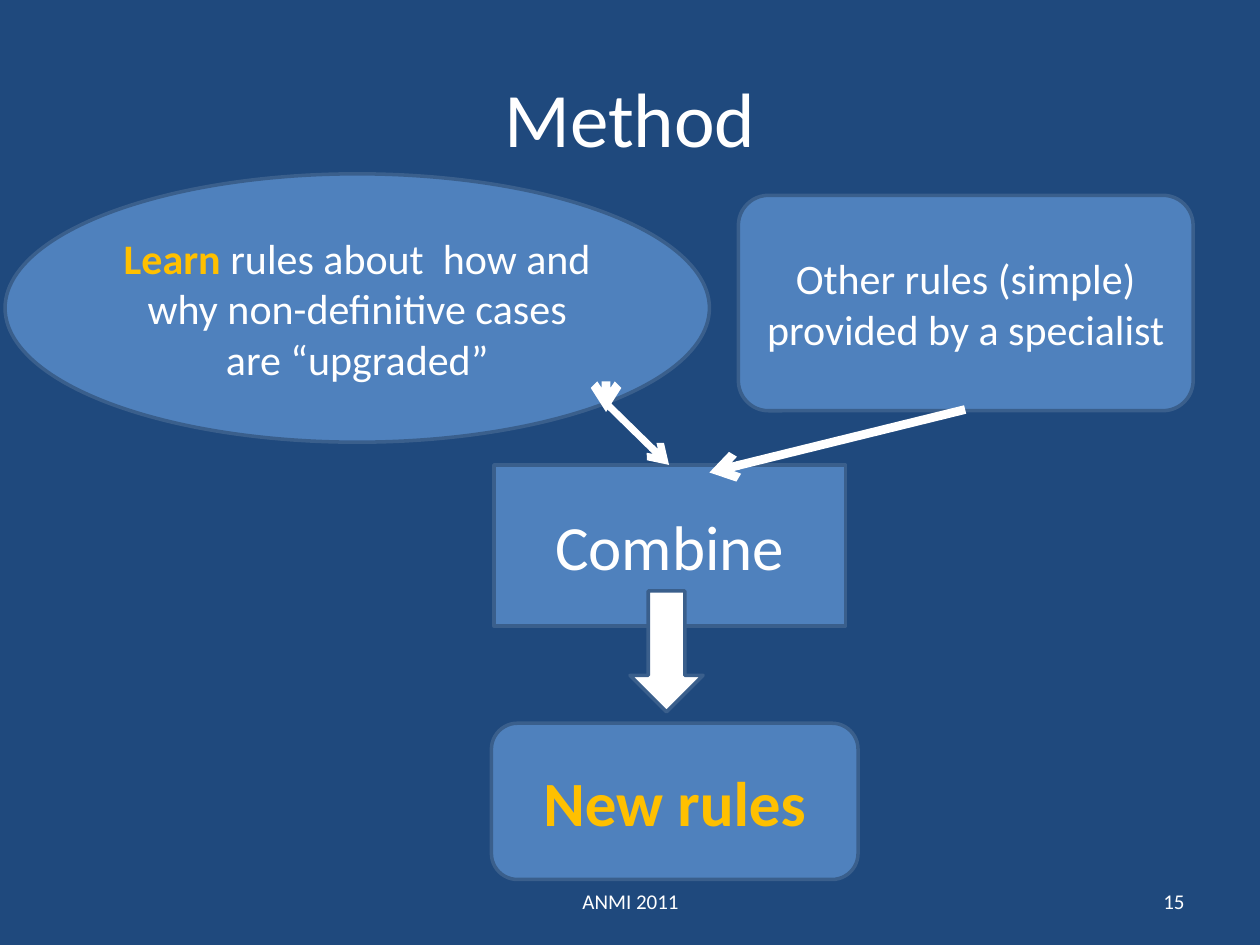
import dataclasses

import pptx
import pptx.dml.color
import pptx.enum.shapes
import pptx.enum.text
import pptx.oxml
import pptx.oxml.ns
import pptx.util

Inches = pptx.util.Inches
Shape = pptx.enum.shapes.MSO_SHAPE
Align = pptx.enum.text.PP_ALIGN


@dataclasses.dataclass(frozen=True)
class Theme:
    font: str = "Calibri"
    background: str = "1F497D"
    box: str = "4F81BD"
    border: str = "3A5F8C"
    light: str = "FFFFFF"
    accent: str = "FFC000"
    title: int = 44
    large: int = 36
    body: int = 24
    small: int = 12


def rgb(value):
    return pptx.dml.color.RGBColor.from_string(value)


def add_span(para, text, *, font, size, color, bold=False):
    span = para.add_run()
    span.text = text
    span.font.name = font
    span.font.size = pptx.util.Pt(size)
    span.font.bold = bold
    span.font.color.rgb = rgb(color)


class SlideBuilder:
    def __init__(self, page, theme):
        self.page = page
        self.theme = theme
        page.background.fill.solid()
        page.background.fill.fore_color.rgb = rgb(theme.background)

    def fill_text(self, box, spans, size, align=Align.CENTER):
        """Fill a box with one paragraph of (text, is accented) spans."""
        frame = box.text_frame
        frame.word_wrap = True
        frame.vertical_anchor = pptx.enum.text.MSO_ANCHOR.MIDDLE
        para = frame.paragraphs[0]
        para.alignment = align
        for text, accented in spans:
            color = self.theme.accent if accented else self.theme.light
            add_span(para, text, font=self.theme.font, size=size,
                     color=color, bold=accented)

    def label(self, place, text, size, align=Align.CENTER):
        box = self.page.shapes.add_textbox(*map(Inches, place))
        self.fill_text(box, [(text, False)], size, align)

    def shape(self, kind, place, fill, spans=(), size=None, corner=None):
        box = self.page.shapes.add_shape(kind, *map(Inches, place))
        box.shadow.inherit = False
        box.fill.solid()
        box.fill.fore_color.rgb = rgb(fill)
        box.line.color.rgb = rgb(self.theme.border)
        box.line.width = pptx.util.Pt(2)
        if corner is not None:
            box.adjustments[0] = corner
        if spans:
            self.fill_text(box, spans, size)

    def arrow(self, start, end, width):
        line = self.page.shapes.add_connector(
            pptx.enum.shapes.MSO_CONNECTOR.STRAIGHT, *map(Inches, start + end))
        line.line.color.rgb = rgb(self.theme.light)
        line.line.width = pptx.util.Pt(width)
        namespace = pptx.oxml.ns.nsdecls("a")
        properties = line._element.spPr
        properties.get_or_add_ln().append(
            pptx.oxml.parse_xml(f'<a:tailEnd {namespace} type="arrow"/>'))
        properties.append(pptx.oxml.parse_xml(f"<a:effectLst {namespace}/>"))


def main():
    deck = pptx.Presentation()
    deck.slide_width, deck.slide_height = Inches(10), Inches(7.5)
    theme = Theme()
    slide = SlideBuilder(deck.slides.add_slide(deck.slide_layouts[6]), theme)

    # Title
    slide.label((0.5, 0.3, 9, 1.25), "Method", theme.title)

    # Two sources of rules and the step that combines them
    slide.shape(Shape.OVAL, (0.04, 1.38, 5.59, 2.13), theme.box,
                [("Learn ", True),
                 ("rules about  how and why non-definitive cases are “upgraded”",
                  False)], theme.body)
    slide.shape(Shape.ROUNDED_RECTANGLE, (5.86, 1.55, 3.61, 1.71), theme.box,
                [("Other rules (simple) provided by a specialist", False)],
                theme.body, corner=0.14)
    slide.shape(Shape.RECTANGLE, (3.92, 3.69, 2.79, 1.28), theme.box,
                [("Combine", False)], theme.large)

    # Arrows into the combining step
    learn_exit = (4.81, 3.2)
    slide.arrow(learn_exit, (4.81, 3.27), 5)
    slide.arrow((7.66, 3.25), (5.63, 3.75), 5)

    # Result
    slide.shape(Shape.DOWN_ARROW, (5, 4.69, 0.58, 0.96), theme.light)
    slide.shape(Shape.FLOWCHART_ALTERNATE_PROCESS, (3.9, 5.74, 2.91, 1.24),
                theme.box, [("New rules", True)], theme.large)

    # Footer
    slide.label((7.17, 6.95, 2.33, 0.4), "15", theme.small, Align.RIGHT)
    slide.label((3.42, 6.95, 3.17, 0.4), "ANMI 2011", theme.small)

    # Front arrow from the learned rules
    slide.arrow(learn_exit, (5.31, 3.69), 4)

    deck.save("out.pptx")


if __name__ == "__main__":
    main()
